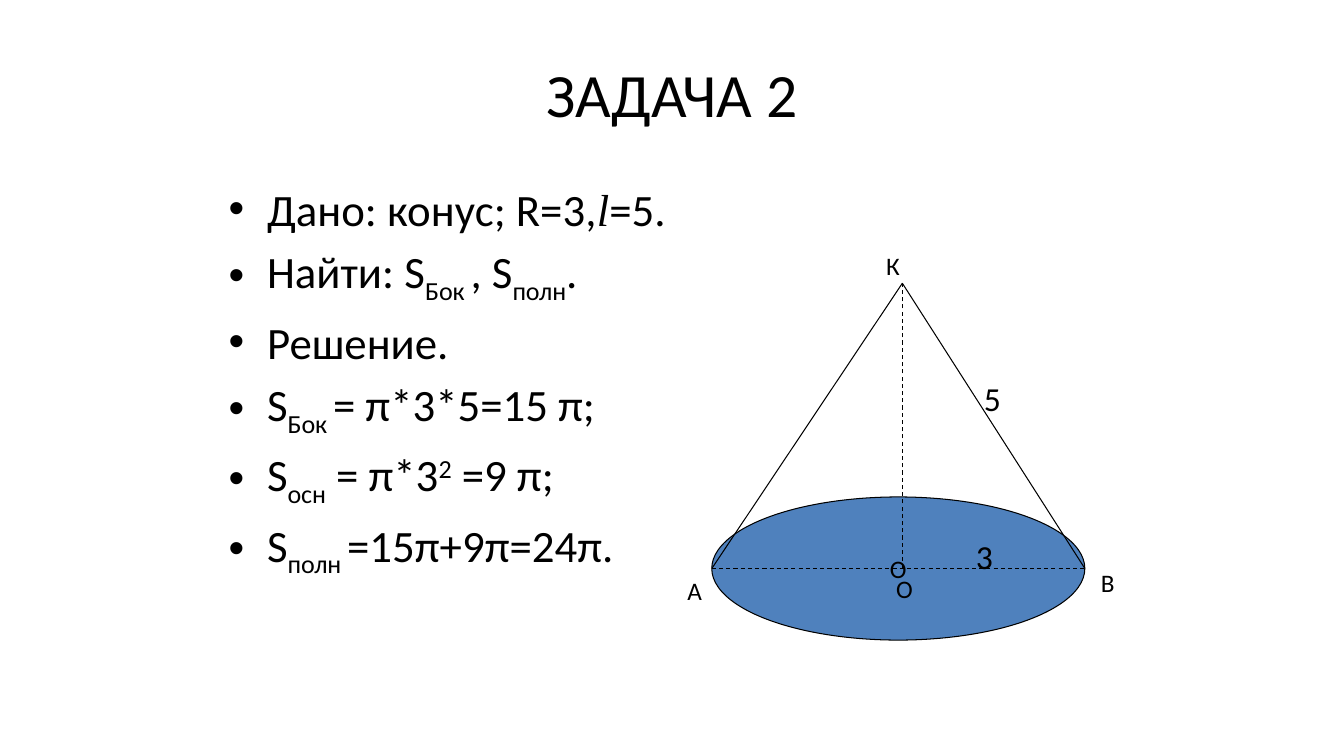
from dataclasses import dataclass

from lxml.etree import SubElement
from pptx import Presentation
from pptx.dml.color import RGBColor
from pptx.enum.dml import MSO_LINE
from pptx.enum.shapes import MSO_CONNECTOR as Connector, MSO_SHAPE as Shape
from pptx.enum.text import MSO_ANCHOR as Anchor, MSO_AUTO_SIZE as AutoSize, PP_ALIGN as Align
from pptx.oxml.ns import qn
from pptx.slide import Slide
from pptx.text.text import TextFrame, _Paragraph as Paragraph
from pptx.util import Inches, Pt


@dataclass(frozen=True)
class Theme:
    ink: RGBColor = RGBColor(0x00, 0x00, 0x00)
    base_fill: RGBColor = RGBColor(0x4F, 0x81, 0xBD)
    font: str = "Calibri"
    symbol_font: str = "Times New Roman"
    title: float = 44
    body: float = 32
    measure: float = 24
    point: float = 18
    outline: float = 0.75


THEME = Theme()


@dataclass(frozen=True)
class Piece:
    text: str
    baseline: int = 0
    symbol: bool = False


@dataclass(frozen=True)
class Edge:
    start: tuple[float, float]
    end: tuple[float, float]
    dashed: bool = False


@dataclass(frozen=True)
class Label:
    text: str
    left: float
    top: float
    width: float
    height: float = 0.4
    size: float = THEME.point
    wrap: bool = False


def sub(text: str) -> Piece:
    return Piece(text, baseline=-25)


SOLUTION = [
    [Piece("Дано: конус; R=3,"), Piece("l", symbol=True), Piece("=5.")],
    [Piece("Найти: S"), sub("Бок "), Piece(", S"), sub("полн"), Piece(".")],
    [Piece("Решение.")],
    [Piece("S"), sub("Бок "), Piece("= π*3*5=15 π;")],
    [Piece("S"), sub("осн"), Piece(" = π*3"), Piece("2", baseline=30), Piece(" =9 π;")],
    [Piece("S"), sub("полн "), Piece("=15π+9π=24π.")],
]

APEX = (8.95, 2.81)
BASE_LEFT, BASE_RIGHT, BASE_Y, BASE_HEIGHT = 7.06, 10.76, 5.64, 1.42
POINT_A = (BASE_LEFT, BASE_Y)
POINT_B = (BASE_RIGHT, BASE_Y)

EDGES = [
    Edge(POINT_A, POINT_B, dashed=True),
    Edge((APEX[0], BASE_Y), APEX, dashed=True),
    Edge(APEX, POINT_A),
    Edge(APEX, POINT_B),
]

LABELS = [
    Label("А", 6.72, 5.66, 0.35),
    Label("В", 10.82, 5.58, 0.34),
    Label("К", 8.69, 2.43, 0.34),
    Label("3", 9.58, 5.27, 0.37, 0.5, THEME.measure),
    Label("5", 9.66, 3.7, 0.37, 0.5, THEME.measure),
    Label("О", 8.79, 5.64, 0.49, wrap=True),
]


def write(paragraph: Paragraph, text: str, *, size: float, font: str = THEME.font,
          italic: bool = False, baseline: int = 0, align: Align = Align.LEFT) -> None:
    paragraph.alignment = align
    run = paragraph.add_run()
    run.text = text
    run.font.size = Pt(size)
    run.font.name = font
    run.font.italic = italic
    run.font.color.rgb = THEME.ink
    if baseline:
        run.font._element.set("baseline", str(baseline * 1000))


def add_bullet(paragraph: Paragraph) -> None:
    properties = paragraph._p.get_or_add_pPr()
    indent = Inches(0.38)
    properties.set("marL", str(indent))
    properties.set("indent", str(-indent))
    SubElement(properties, qn("a:buFont")).set("typeface", "Arial")
    SubElement(properties, qn("a:buChar")).set("char", "•")


def draw_title(slide: Slide) -> None:
    title = slide.shapes.title
    title.left, title.top = Inches(0.67), Inches(0.3)
    title.width, title.height = Inches(12), Inches(1.25)
    frame = title.text_frame
    frame.auto_size = AutoSize.NONE
    frame.vertical_anchor = Anchor.MIDDLE
    write(frame.paragraphs[0], "ЗАДАЧА 2", size=THEME.title, align=Align.CENTER)


def add_text_frame(slide: Slide, left: float, top: float, width: float, height: float,
                   wrap: bool = True) -> TextFrame:
    box = slide.shapes.add_textbox(Inches(left), Inches(top), Inches(width), Inches(height))
    box.text_frame.word_wrap = wrap
    return box.text_frame


def draw_solution(slide: Slide) -> None:
    frame = add_text_frame(slide, 2.17, 1.75, 4.81, 4.95)
    for number, pieces in enumerate(SOLUTION):
        paragraph = frame.add_paragraph() if number else frame.paragraphs[0]
        paragraph.space_before = Pt(THEME.body * 0.2)
        add_bullet(paragraph)
        for piece in pieces:
            write(paragraph, piece.text, size=THEME.body, baseline=piece.baseline,
                  font=THEME.symbol_font if piece.symbol else THEME.font, italic=piece.symbol)


def draw_base(slide: Slide) -> None:
    base = slide.shapes.add_shape(
        Shape.OVAL, Inches(BASE_LEFT), Inches(BASE_Y - BASE_HEIGHT / 2),
        Inches(BASE_RIGHT - BASE_LEFT), Inches(BASE_HEIGHT))
    base.shadow.inherit = False
    base.fill.solid()
    base.fill.fore_color.rgb = THEME.base_fill
    base.line.color.rgb = THEME.ink
    base.line.width = Pt(THEME.outline)
    frame = base.text_frame
    frame.word_wrap = False
    frame.vertical_anchor = Anchor.MIDDLE
    write(frame.paragraphs[0], "О", size=THEME.point, align=Align.CENTER)


def draw_edge(slide: Slide, edge: Edge) -> None:
    line = slide.shapes.add_connector(
        Connector.STRAIGHT, *(Inches(value) for value in edge.start + edge.end))
    line.line.color.rgb = THEME.ink
    line.line.width = Pt(THEME.outline)
    if edge.dashed:
        line.line.dash_style = MSO_LINE.DASH
    SubElement(line._element.spPr, qn("a:effectLst"))


def draw_label(slide: Slide, label: Label) -> None:
    frame = add_text_frame(slide, label.left, label.top, label.width, label.height, label.wrap)
    frame.auto_size = AutoSize.SHAPE_TO_FIT_TEXT
    write(frame.paragraphs[0], label.text, size=label.size)


def main() -> None:
    deck = Presentation()
    deck.slide_width, deck.slide_height = Inches(13.33), Inches(7.5)
    slide = deck.slides.add_slide(deck.slide_layouts[5])
    draw_title(slide)
    draw_solution(slide)
    draw_base(slide)
    for edge in EDGES:
        draw_edge(slide, edge)
    for label in LABELS:
        draw_label(slide, label)
    deck.save("out.pptx")


if __name__ == "__main__":
    main()
